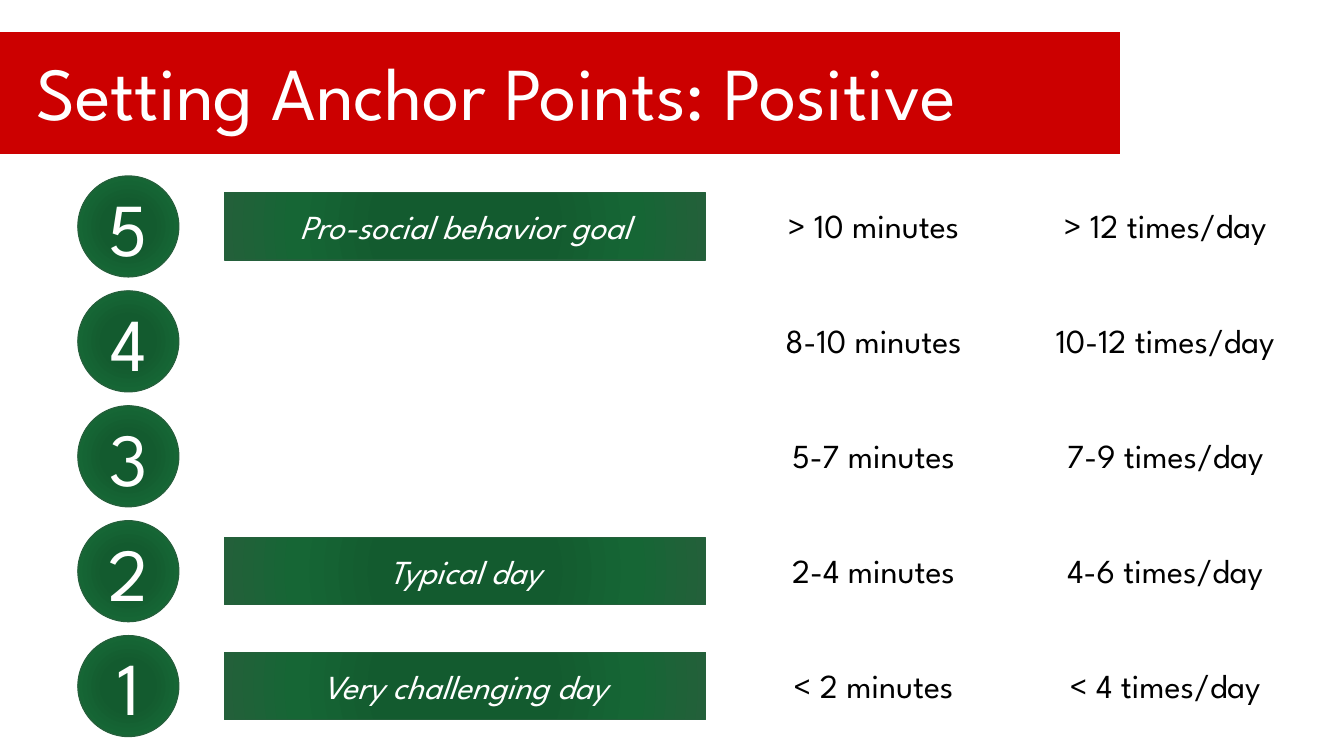
"""Build the slide that sets positive anchor points on a five-level scale."""
from dataclasses import dataclass

from pptx import Presentation
from pptx.dml.color import RGBColor
from pptx.enum.shapes import MSO_SHAPE as Preset
from pptx.enum.text import MSO_ANCHOR as Anchor, MSO_AUTO_SIZE as AutoSize, PP_ALIGN as Align
from pptx.oxml import parse_xml
from pptx.oxml.ns import nsdecls
from pptx.shapes.autoshape import Shape
from pptx.slide import Slide
from pptx.util import Inches, Pt

FONT = "League Spartan"
WHITE, BLACK, RED, EDGE_GREEN = "FFFFFF", "000000", "CC0000", "24603B"
GREEN_STOPS = ((0, "115D2F"), (34, "135B2F"), (70, "166635"), (100, "23603A"))
SLIDE_WIDTH = 10
SLIDE_HEIGHT = SLIDE_WIDTH * 9 / 16
CIRCLE_SIZE, LABEL_HEIGHT, TEXT_HEIGHT = 0.75, 0.5, 0.42
FIRST_CENTER, ROW_PITCH = 1.31 + CIRCLE_SIZE / 2, 3.42 / 4


@dataclass(frozen=True)
class Level:
    number: int
    duration: str
    frequency: str
    label: str = ""


LEVELS = (
    Level(5, "> 10 minutes", "> 12 times/day", "Pro-social behavior goal"),
    Level(4, "8-10 minutes", "10-12 times/day"),
    Level(3, "5-7 minutes", "7-9 times/day"),
    Level(2, "2-4 minutes", "4-6 times/day", "Typical day"),
    Level(1, "< 2 minutes", "< 4 times/day", "Very challenging day"),
)


def color(value: str) -> RGBColor:
    """Turn a hex string into a colour."""
    return RGBColor.from_string(value)


def write(shape: Shape, text: str, *, size: int = 18, ink: str = WHITE, italic: bool = False,
          align: Align = Align.CENTER, anchor: Anchor = Anchor.MIDDLE) -> None:
    """Put formatted text into a shape."""
    frame = shape.text_frame
    frame.word_wrap = True
    frame.auto_size = AutoSize.NONE
    frame.vertical_anchor = anchor
    paragraph = frame.paragraphs[0]
    paragraph.alignment = align
    run = paragraph.add_run()
    run.text = text
    run.font.name, run.font.size = FONT, Pt(size)
    run.font.italic = italic
    run.font.color.rgb = color(ink)


def add_preset(slide: Slide, preset: Preset, left: float, top: float, width: float,
               height: float, edge: str) -> Shape:
    """Add an outlined preset shape without a shadow."""
    shape = slide.shapes.add_shape(preset, Inches(left), Inches(top), Inches(width), Inches(height))
    shape.shadow.inherit = False
    shape.line.color.rgb = color(edge)
    shape.line.width = Pt(0.75)
    return shape


def fill_green(shape: Shape) -> None:
    """Fill a shape with the radial green gradient."""
    stops = "".join(f'<a:gs pos="{position * 1000}"><a:srgbClr val="{value}"/></a:gs>'
                    for position, value in GREEN_STOPS)
    gradient = parse_xml(
        f'<a:gradFill {nsdecls("a")} rotWithShape="1"><a:gsLst>{stops}</a:gsLst>'
        '<a:path path="circle"><a:fillToRect l="50000" t="50000" r="50000" b="50000"/></a:path>'
        '</a:gradFill>')
    shape.fill.gradient()
    properties = shape._element.spPr
    properties.replace(properties.find(gradient.tag), gradient)


def add_green(slide: Slide, preset: Preset, left: float, center: float, width: float,
              height: float, text: str, **text_format) -> None:
    """Add a green shape with text, centred vertically on its row."""
    shape = add_preset(slide, preset, left, center - height / 2, width, height, EDGE_GREEN)
    fill_green(shape)
    write(shape, text, **text_format)


def add_range(slide: Slide, left: float, center: float, text: str) -> None:
    """Add a plain text box for one range."""
    box = slide.shapes.add_textbox(Inches(left), Inches(center - TEXT_HEIGHT / 2),
                                   Inches(2), Inches(TEXT_HEIGHT))
    write(box, text, ink=BLACK, anchor=Anchor.TOP)


def add_heading(slide: Slide, text: str) -> None:
    """Place the title over its red banner."""
    banner = add_preset(slide, Preset.RECTANGLE, -0.08, 0.23, 8.42, 0.92, WHITE)
    banner.fill.solid()
    banner.fill.fore_color.rgb = color(RED)
    title = slide.shapes.title
    title._element.addprevious(banner._element)
    title.left, title.top = Inches(0.17), Inches(0.27)
    title.width, title.height = Inches(8.17), Inches(0.81)
    write(title, text, size=40, align=Align.LEFT)


def add_level(slide: Slide, level: Level, center: float) -> None:
    """Draw one row of the scale."""
    add_green(slide, Preset.OVAL, 0.58, center, CIRCLE_SIZE, CIRCLE_SIZE,
              str(level.number), size=40)
    if level.label:
        add_green(slide, Preset.RECTANGLE, 1.67, center, 3.58, LABEL_HEIGHT,
                  level.label, italic=True)
    add_range(slide, 5.5, center, level.duration)
    add_range(slide, 7.67, center, level.frequency)


def main() -> None:
    """Build and save the presentation."""
    presentation = Presentation()
    presentation.slide_width = Inches(SLIDE_WIDTH)
    presentation.slide_height = Inches(SLIDE_HEIGHT)
    slide = presentation.slides.add_slide(presentation.slide_layouts.get_by_name("Title Only"))
    add_heading(slide, "Setting Anchor Points: Positive")
    for row, level in enumerate(LEVELS):
        add_level(slide, level, FIRST_CENTER + row * ROW_PITCH)
    presentation.save("out.pptx")


if __name__ == "__main__":
    main()
